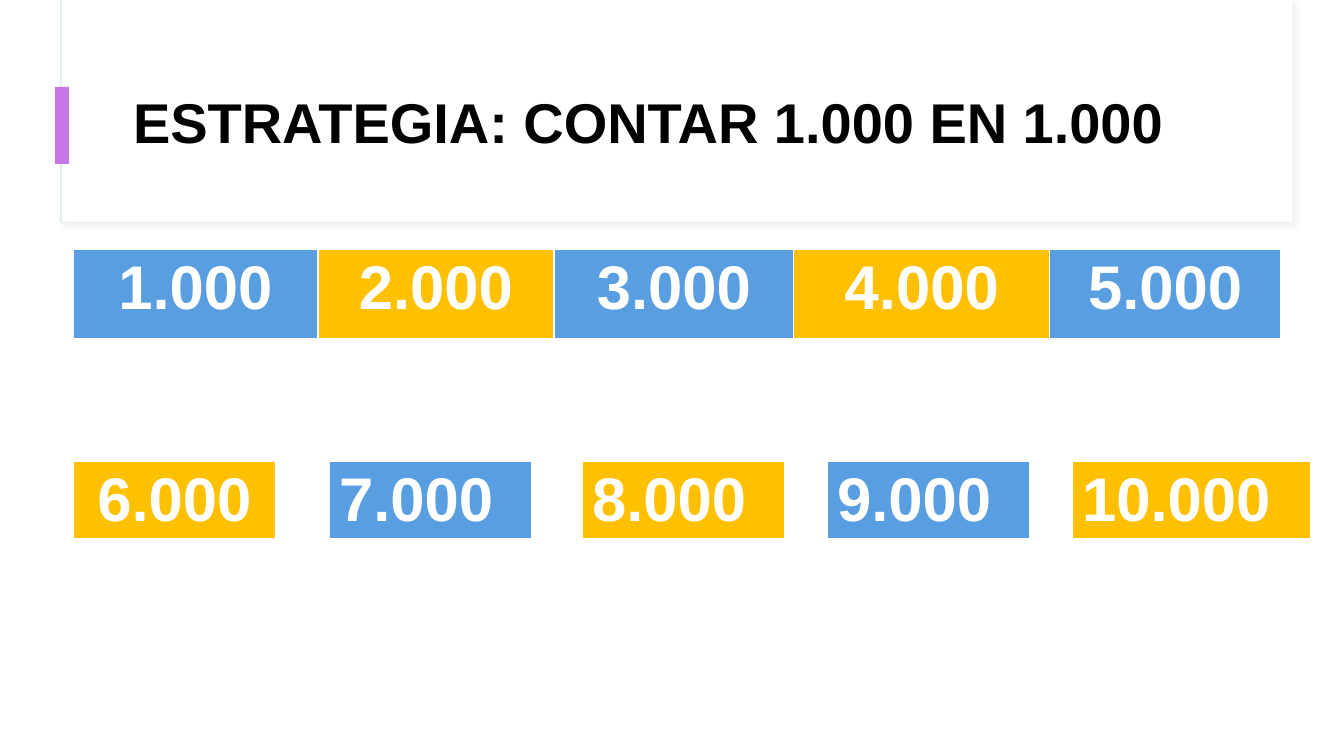
from lxml.etree import SubElement
from pptx import Presentation
from pptx.dml.color import RGBColor as RGB
from pptx.enum.shapes import MSO_SHAPE as SHAPE
from pptx.enum.text import MSO_ANCHOR as ANCHOR, MSO_AUTO_SIZE as AUTO_SIZE, PP_ALIGN as ALIGN
from pptx.oxml.ns import qn
from pptx.util import Emu, Pt

COLORS = {
    "white": "FFFFFF", "black": "000000", "edge": "E4F0EF", "shade": "D9D9D9",
    "accent": "C976E6", "blue": "589EE1", "yellow": "FFC000",
}
FONT = "Arial"
BORDERS = {"a:lnL": 1, "a:lnR": 1, "a:lnT": 1, "a:lnB": 3}


def px(length):
    """Turn px into EMU."""
    return Emu(round(length * 914400 / 100.8))


def rgb(name):
    """Look up a colour by name."""
    return RGB.from_string(COLORS[name])


def style_text(paragraph, size, color, align):
    """Format a whole paragraph in the bold slide font."""
    paragraph.alignment = align
    font = paragraph.font
    font.name, font.size, font.bold = FONT, Pt(size), True
    font.color.rgb = rgb(color)


def add_panel(slide, box, fill):
    """Add a plain filled rectangle without outline."""
    panel = slide.shapes.add_shape(SHAPE.RECTANGLE, *map(px, box))
    panel.shadow.inherit = False
    panel.fill.solid()
    panel.fill.fore_color.rgb = rgb(fill)
    panel.line.fill.background()
    return panel


def add_soft_shadow(panel):
    """Give a panel a faint shadow to the lower right."""
    effects = panel._element.spPr.find(qn("a:effectLst"))
    shadow = SubElement(effects, qn("a:outerShdw"), blurRad=str(Pt(4)), dist=str(Pt(3)),
                        dir=str(45 * 60000), algn="tl", rotWithShape="0")
    shade = SubElement(shadow, qn("a:srgbClr"), val=COLORS["shade"])
    SubElement(shade, qn("a:alpha"), val="30000")


def add_header(slide, box, heading):
    """Place the framed header with its accent bar and title."""
    left, top, width, height = box
    frame = add_panel(slide, box, "white")
    frame.line.color.rgb = rgb("edge")
    frame.line.width = Pt(0.75)
    add_soft_shadow(frame)
    add_panel(slide, (left + 1, top, width - 1, height - 1), "white")
    add_panel(slide, (left - 6, top + 87, 14, 77), "accent")

    title = slide.shapes.title
    slide.shapes._spTree.append(title._element)
    title.left, title.top = px(left + 62), px(top + 60)
    title.width, title.height = px(1121), px(130)
    title.text = heading
    title.text_frame.auto_size = AUTO_SIZE.NONE
    title.text_frame.vertical_anchor = ANCHOR.MIDDLE
    paragraph = title.text_frame.paragraphs[0]
    paragraph.line_spacing = 0.9
    style_text(paragraph, 40, "black", ALIGN.LEFT)


def fill_cell(cell, number, color, align):
    """Write a number in a coloured cell with white borders."""
    properties = cell._tc.get_or_add_tcPr()
    for side, weight in BORDERS.items():
        border = SubElement(properties, qn(side), w=str(Pt(weight)))
        SubElement(SubElement(border, qn("a:solidFill")), qn("a:srgbClr"), val=COLORS["white"])
    cell.fill.solid()
    cell.fill.fore_color.rgb = rgb(color)
    cell.text = number
    style_text(cell.text_frame.paragraphs[0], 44, "white", align)


def add_number_strip(slide, left, top, height, widths, first, align):
    """Place a one-row table counting in thousands from the first number."""
    strip = slide.shapes.add_table(
        1, len(widths), px(left), px(top), px(sum(widths)), px(height)).table
    strip.rows[0].height = px(height)
    for index, width in enumerate(widths):
        strip.columns[index].width = px(width)
        thousand = first + index
        color = "blue" if thousand % 2 else "yellow"
        fill_cell(strip.cell(0, index), f"{thousand}.000", color, align)


def add_number_cards(slide, top, height, cards, first):
    """Place separate number cards, the first one centred."""
    for index, (left, width) in enumerate(cards):
        align = ALIGN.LEFT if index else ALIGN.CENTER
        add_number_strip(slide, left, top, height, [width], first + index, align)


def main():
    """Build and save the slide."""
    deck = Presentation()
    deck.slide_width, deck.slide_height = px(1344), px(756)
    slide = deck.slides.add_slide(deck.slide_layouts[5])
    add_header(slide, (61, 0, 1231, 223), "ESTRATEGIA: CONTAR 1.000 EN 1.000")
    add_number_strip(slide, 73, 249, 91, [245, 236, 240, 256, 231], 1, ALIGN.CENTER)
    cards = [(73, 203), (329, 203), (582, 203), (827, 203), (1072, 239)]
    add_number_cards(slide, 461, 79, cards, 6)
    deck.save("out.pptx")


if __name__ == "__main__":
    main()
